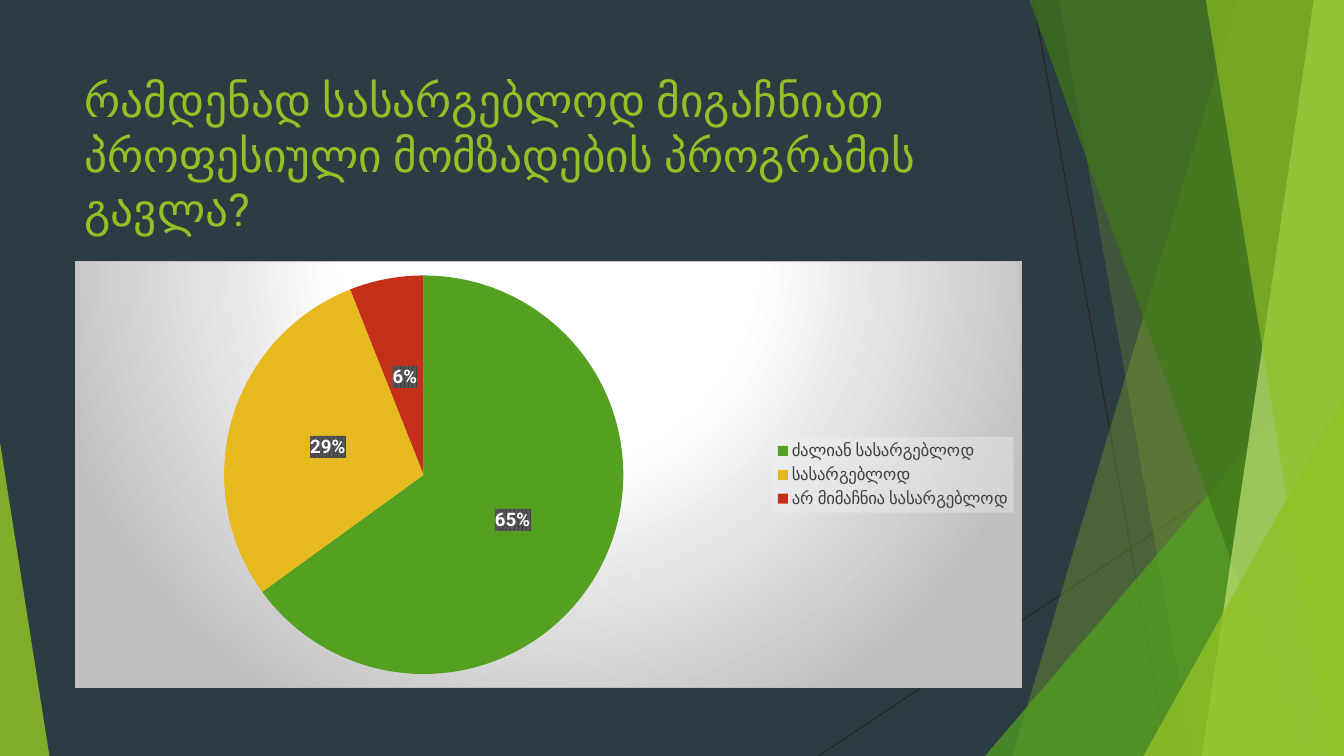
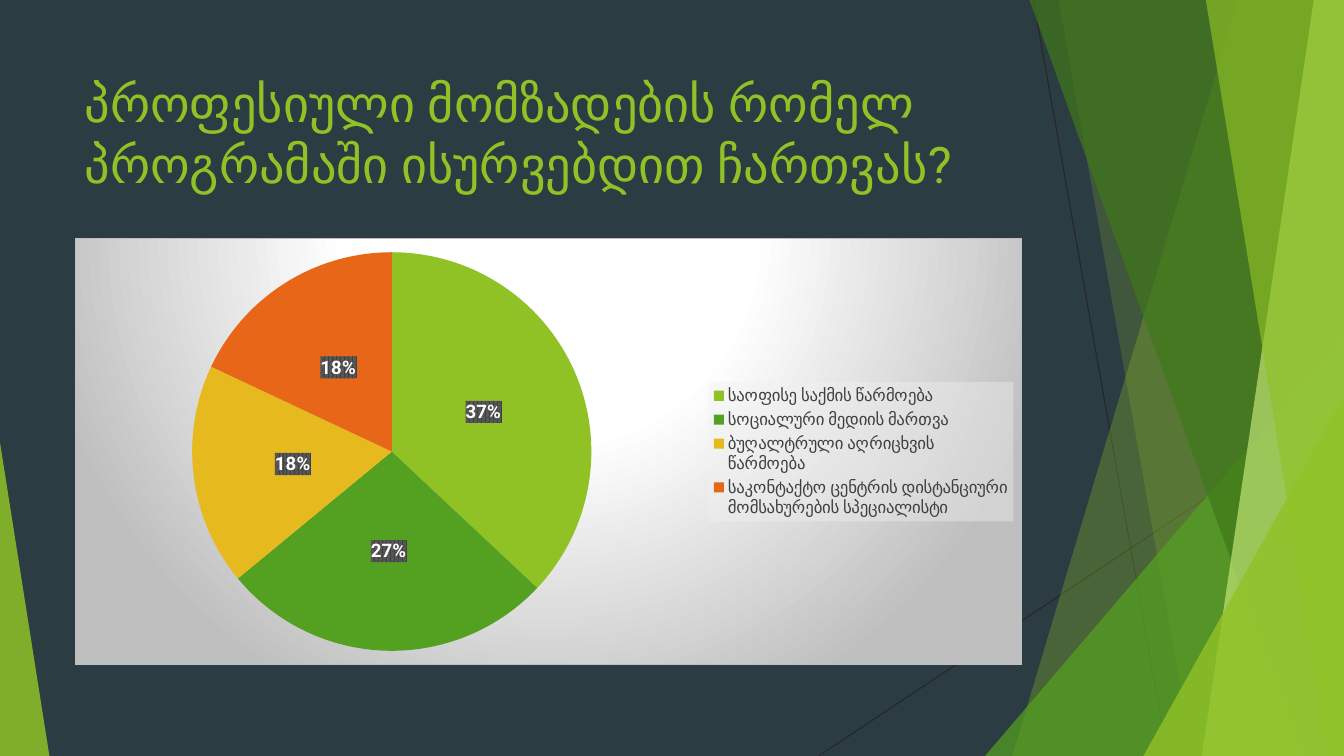
"""Two survey slides, each with a title and a pie chart on a faceted green ground."""
from lxml import etree
from pptx import Presentation
from pptx.chart.data import CategoryChartData
from pptx.dml.color import RGBColor
from pptx.enum.chart import XL_CHART_TYPE, XL_LABEL_POSITION, XL_LEGEND_POSITION
from pptx.enum.shapes import MSO_CONNECTOR, MSO_SHAPE
from pptx.oxml import parse_xml
from pptx.oxml.ns import qn
from pptx.util import Inches, Pt

PIE = XL_CHART_TYPE.PIE
CENTER = XL_LABEL_POSITION.CENTER
RIGHT = XL_LEGEND_POSITION.RIGHT
LINE = MSO_CONNECTOR.STRAIGHT
TRIANGLE = MSO_SHAPE.ISOSCELES_TRIANGLE

NIGHT = RGBColor(0x2C, 0x3C, 0x43)
INK = RGBColor(0x26, 0x26, 0x26)
GRAY = RGBColor(0x40, 0x40, 0x40)
WHITE = RGBColor(0xFF, 0xFF, 0xFF)
LIME = RGBColor(0x90, 0xC2, 0x26)
GREEN = RGBColor(0x54, 0xA0, 0x21)
MOSS = RGBColor(0x3F, 0x78, 0x19)
PALE = RGBColor(0xC0, 0xE4, 0x74)
GOLD = RGBColor(0xE6, 0xB9, 0x1E)
RED = RGBColor(0xC4, 0x2F, 0x1A)
ORANGE = RGBColor(0xE7, 0x66, 0x18)

FONT = "Roboto"
WIDE, HIGH = 13.33, 7.5
LEFT, SPAN = 0.74, 9.4

RAYS = [((10.25, 0), (11.58, HIGH)), ((WIDE, 4.03), (8.12, HIGH))]
FACETS = [
    ("band", (12.28, 10.04), LIME, 30),
    ("band", (10.5, 11.83), LIME, 20),
    ("peak", (9.77, 3.33, 3.56, 4.17, 1), GREEN, 72),
    ("band", (10.21, 12.91), MOSS, 70),
    ("band", (13.03, 11.92), PALE, 70),
    ("band", (11.96, 13.18), LIME, 65),
    ("peak", (11.34, 3.93, 1.99, 3.57, 1), LIME, 80),
    ("peak", (0, 4.39, 0.49, 3.11, 0), LIME, 85),
]

BACK = (
    '<a:gradFill><a:gsLst>'
    '<a:gs pos="0"><a:srgbClr val="FFFFFF"/></a:gs>'
    '<a:gs pos="39000"><a:srgbClr val="FFFFFF"/></a:gs>'
    '<a:gs pos="100000"><a:srgbClr val="BFBFBF"/></a:gs></a:gsLst>'
    '<a:path path="circle"><a:fillToRect l="50000" t="-80000" r="50000" b="180000"/></a:path>'
    '</a:gradFill>'
    '<a:ln w="9525"><a:solidFill><a:srgbClr val="BFBFBF"/></a:solidFill></a:ln>'
)
PANEL = '<a:solidFill><a:srgbClr val="F2F2F2"><a:alpha val="39000"/></a:srgbClr></a:solidFill>'
HATCH = (
    '<a:pattFill prst="pct75"><a:fgClr><a:srgbClr val="404040"/></a:fgClr>'
    '<a:bgClr><a:srgbClr val="595959"/></a:bgClr></a:pattFill>'
)

SLIDES = [
    ("რამდენად სასარგებლოდ მიგაჩნიათ პროფესიული მომზადების პროგრამის გავლა?", 32.4, 2.59, [
        ("ძალიან სასარგებლოდ", 65, GREEN),
        ("სასარგებლოდ", 29, GOLD),
        ("არ მიმაჩნია სასარგებლოდ", 6, RED),
    ]),
    ("პროფესიული მომზადების რომელ პროგრამაში ისურვებდით ჩართვას?", 36, 2.36, [
        ("საოფისე საქმის წარმოება", 37, LIME),
        ("სოციალური მედიის მართვა", 27, GREEN),
        ("ბუღალტრული აღრიცხვის წარმოება", 18, GOLD),
        ("საკონტაქტო ცენტრის დისტანციური მომსახურების სპეციალისტი", 18, ORANGE),
    ]),
]


def set_font(font, size, color, bold=False):
    font.name, font.size, font.bold = FONT, Pt(size), bold
    font.color.rgb = color


def set_back(node, fill):
    text = node.find(qn("c:txPr"))
    text.addprevious(parse_xml(
        '<c:spPr xmlns:c="http://schemas.openxmlformats.org/drawingml/2006/chart" '
        'xmlns:a="http://schemas.openxmlformats.org/drawingml/2006/main">' + fill + '</c:spPr>'))


prs = Presentation()
prs.slide_width, prs.slide_height = Inches(WIDE), Inches(HIGH)
ground = prs.slide_master.background.fill
ground.solid()
ground.fore_color.rgb = NIGHT

for title, size, top, parts in SLIDES:
    slide = prs.slides.add_slide(prs.slide_layouts[6])
    shapes = slide.shapes

    for start, end in RAYS:
        ray = shapes.add_connector(LINE, *map(Inches, start + end))
        ray.line.color.rgb = INK
        ray.line.width = Pt(0.75)
        etree.SubElement(ray.element.spPr, qn("a:effectLst"))

    for kind, place, color, alpha in FACETS:
        if kind == "band":
            upper, lower = place
            pen = shapes.build_freeform(Inches(upper), 0)
            pen.add_line_segments([
                (Inches(x), Inches(y)) for x, y in [(WIDE, 0), (WIDE, HIGH), (lower, HIGH)]])
            facet = pen.convert_to_shape()
        else:
            facet = shapes.add_shape(TRIANGLE, *map(Inches, place[:4]))
            facet.adjustments[0] = place[4]
        facet.shadow.inherit = False
        facet.line.fill.background()
        facet.fill.solid()
        facet.fill.fore_color.rgb = color
        tint = facet.element.spPr.find(qn("a:solidFill"))[0]
        etree.SubElement(tint, qn("a:alpha"), val=str(alpha * 1000))

    frame = shapes.add_textbox(Inches(LEFT), Inches(0.67), Inches(SPAN), Inches(1.44)).text_frame
    frame.word_wrap = True
    run = frame.paragraphs[0].add_run()
    run.text = title
    set_font(run.font, size, LIME)

    data = CategoryChartData()
    data.categories = [name for name, share, color in parts]
    data.add_series("Series 1", [share for name, share, color in parts])
    chart = shapes.add_chart(
        PIE, Inches(LEFT), Inches(top), Inches(SPAN), Inches(4.24), data).chart
    chart.has_title = False
    set_font(chart.font, 10, WHITE)
    chart.has_legend = True
    chart.legend.position = RIGHT
    chart.legend.include_in_layout = False
    set_font(chart.legend.font, 12, GRAY)

    plot = chart.plots[0]
    plot.vary_by_categories = True
    for spot, (name, share, color) in enumerate(parts):
        fill = plot.series[0].points[spot].format.fill
        fill.solid()
        fill.fore_color.rgb = color
    plot.has_data_labels = True
    labels = plot.data_labels
    labels.show_percentage = True
    labels.show_value = False
    labels.number_format = "0%"
    labels.number_format_is_linked = False
    labels.position = CENTER
    set_font(labels.font, 13.3, WHITE, True)

    root = chart.element
    set_back(root, BACK)
    set_back(root.find(".//" + qn("c:legend")), PANEL)
    set_back(root.find(".//" + qn("c:dLbls")), HATCH)

prs.save("out.pptx")
